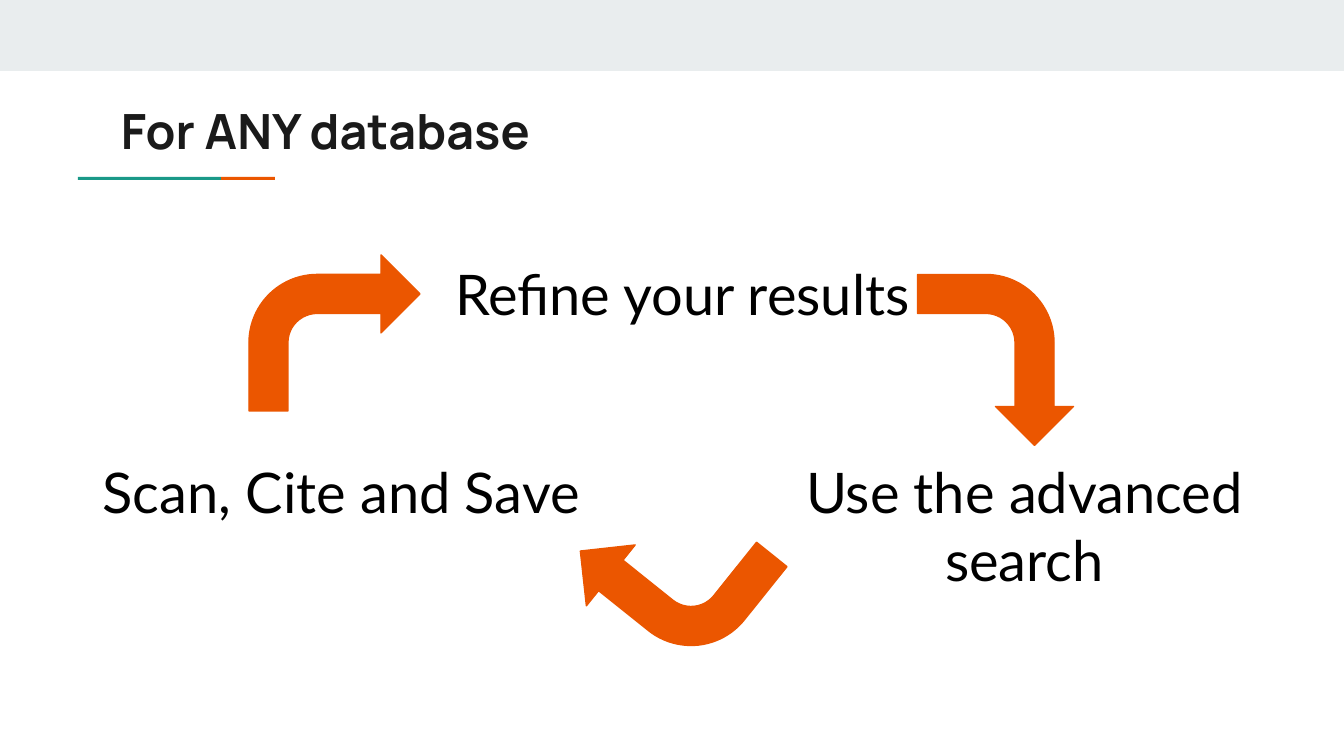
from dataclasses import dataclass

from pptx import Presentation
from pptx.dml.color import RGBColor
from pptx.enum.shapes import MSO_SHAPE as Shape
from pptx.enum.text import MSO_ANCHOR as Anchor, PP_ALIGN as Align
from pptx.util import Pt

SLIDE_W, SLIDE_H = 1344, 756
EMU_PER_PX = 9144000 / SLIDE_W


@dataclass(frozen=True)
class Theme:
    band: str = "E9EDEE"
    orange: str = "EB5600"
    teal: str = "1A9988"
    title: str = "1A1A1A"
    text: str = "000000"
    title_font: str = "Manrope"
    text_font: str = "Lato"
    title_size: int = 26
    text_size: int = 30
    outline: float = 0.75


THEME = Theme()


def px(n):
    return round(n * EMU_PER_PX)


def add_filled(slide, kind, x, y, w, h, color):
    s = slide.shapes.add_shape(kind, px(x), px(y), px(w), px(h))
    s.shadow.inherit = False
    s.fill.solid()
    s.fill.fore_color.rgb = RGBColor.from_string(color)
    s.line.fill.background()
    return s


def add_text(slide, x, y, w, h, text, font, size, color, bold=False, align=Align.LEFT):
    tf = slide.shapes.add_textbox(px(x), px(y), px(w), px(h)).text_frame
    tf.word_wrap = True
    tf.vertical_anchor = Anchor.TOP
    tf.margin_left = tf.margin_right = tf.margin_top = tf.margin_bottom = px(13)
    p = tf.paragraphs[0]
    p.text = text
    p.alignment = align
    p.font.name = font
    p.font.size = Pt(size)
    p.font.bold = bold
    p.font.color.rgb = RGBColor.from_string(color)


def add_header(slide, x, y, w, h):
    """Band across the top, then the title and its two-colour rule."""
    add_filled(slide, Shape.RECTANGLE, x, y, w, 71, THEME.band)
    add_filled(slide, Shape.RECTANGLE, x + 221, y + h - 3, 54, 3, THEME.orange)
    add_filled(slide, Shape.RECTANGLE, x + 78, y + h - 3, 143, 3, THEME.teal)
    add_text(slide, x + 108, y + 88, 1130, 79, "For ANY database",
             THEME.title_font, THEME.title_size, THEME.title, bold=True)


def add_cycle(slide, x, y, w, h):
    """Three steps joined by bent arrows: one on top, two at the lower corners."""
    label_w, label_h = 519, 70
    arrow_w, arrow_h = 171, 156
    lower_y = y + 198
    steps = [
        ("Refine your results", x + (w - label_w) // 2, y),
        ("Use the advanced search", x + w - label_w, lower_y),
        ("Scan, Cite and Save", x, lower_y),
    ]
    for text, left, top in steps:
        add_text(slide, left, top, label_w, label_h, text, THEME.text_font,
                 THEME.text_size, THEME.text, align=Align.CENTER)

    arrows = [(167, 8, 0), (828, 35, 90), (504, 249, 218.7)]
    for dx, dy, angle in arrows:
        s = add_filled(slide, Shape.BENT_ARROW, x + dx, y + dy,
                       arrow_w, arrow_h, THEME.orange)
        s.rotation = angle
        s.line.color.rgb = RGBColor.from_string(THEME.orange)
        s.line.width = Pt(THEME.outline)


def main():
    prs = Presentation()
    prs.slide_width, prs.slide_height = px(SLIDE_W), px(SLIDE_H)
    slide = prs.slides.add_slide(prs.slide_layouts[6])
    add_header(slide, 0, 0, SLIDE_W, 180)
    add_cycle(slide, 82, 247, 1202, 405)
    prs.save("out.pptx")


if __name__ == "__main__":
    main()
